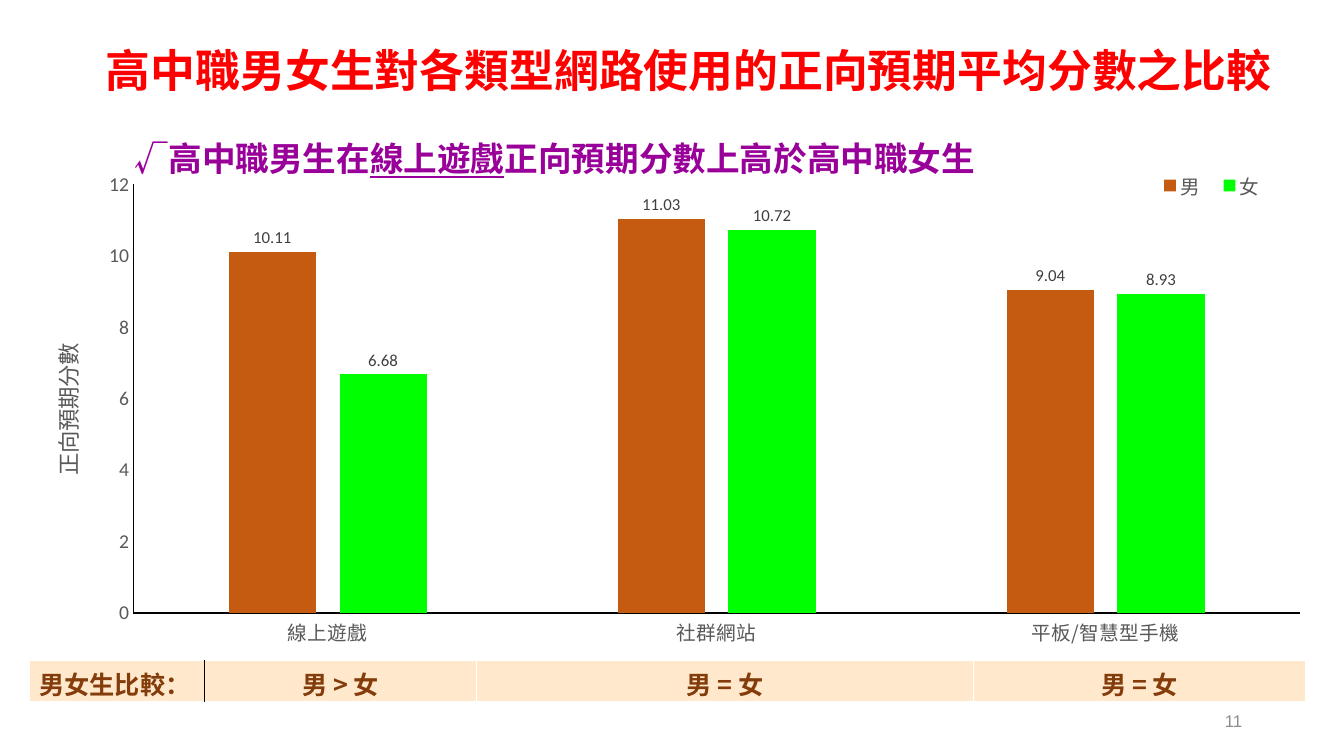
import dataclasses

import lxml.etree
import pptx
import pptx.chart.data
import pptx.dml.color
import pptx.enum.chart
import pptx.enum.text
import pptx.oxml.ns
import pptx.util

qn = pptx.oxml.ns.qn
ALIGN = pptx.enum.text.PP_ALIGN
ANCHOR = pptx.enum.text.MSO_ANCHOR
AUTO_SIZE = pptx.enum.text.MSO_AUTO_SIZE


@dataclasses.dataclass(frozen=True)
class Theme:
    """Colours, fonts and type sizes of the slide."""
    cjk: str = "Noto Sans CJK SC"
    latin: str = "Calibri"
    number_font: str = "Arial"
    white: str = "FFFFFF"
    black: str = "000000"
    title: str = "FF0000"
    finding: str = "990099"
    male: str = "C55A11"
    female: str = "00FF00"
    axis: str = "595959"
    label: str = "404040"
    band: str = "FFE8CC"
    band_text: str = "843C0B"
    number: str = "8C8C8C"
    title_size: int = 32
    finding_size: int = 24
    band_size: int = 18
    axis_title_size: int = 16
    axis_size: int = 14
    small_size: int = 12


THEME = Theme()


def rgb(code):
    """Return the colour for a hexadecimal code."""
    return pptx.dml.color.RGBColor.from_string(code)


def style(font, size, color, name=THEME.cjk, bold=False):
    """Set size, colour, typeface and weight of a font."""
    font.size = pptx.util.Pt(size)
    font.color.rgb = rgb(color)
    font.name = name
    font.bold = bold


def use_east_asian_font(root):
    """Give every styled font below root the same East Asian typeface."""
    for latin in list(root.iter(qn("a:latin"))):
        east_asian = lxml.etree.Element(qn("a:ea"), typeface=THEME.cjk)
        latin.addnext(east_asian)


def share_box(deck, left, top, width, height):
    """Turn percentages of the slide into left, top, width and height."""
    across, down = deck.slide_width / 100, deck.slide_height / 100
    return [int(length) for length in
            (left * across, top * down, width * across, height * down)]


def add_title(page, box):
    """Fill and place the title placeholder."""
    title = page.shapes.title
    title.left, title.top, title.width, title.height = box
    frame = title.text_frame
    frame.text = "高中職男女生對各類型網路使用的正向預期平均分數之比較"
    frame.auto_size = AUTO_SIZE.NONE
    frame.vertical_anchor = ANCHOR.MIDDLE
    para = frame.paragraphs[0]
    para.alignment = ALIGN.CENTER
    para.line_spacing = 0.9
    style(para.runs[0].font, THEME.title_size, THEME.title, bold=True)


def add_finding(page, box):
    """Add the finding, with its subject underlined."""
    frame = page.shapes.add_textbox(*box).text_frame
    frame.word_wrap = False
    frame.auto_size = AUTO_SIZE.SHAPE_TO_FIT_TEXT
    for text, underlined in (("√高中職男生在", False), ("線上遊戲", True),
                             ("正向預期分數上高於高中職女生", False)):
        span = frame.paragraphs[0].add_run()
        span.text = text
        style(span.font, THEME.finding_size, THEME.finding, bold=True)
        span.font.underline = underlined


def set_layout(parent, index, target=None, **shares):
    """Fix a chart part at shares of the chart area."""
    for old in parent.findall(qn("c:layout")):
        parent.remove(old)
    layout = lxml.etree.Element(qn("c:layout"))
    manual = lxml.etree.SubElement(layout, qn("c:manualLayout"))
    if target:
        lxml.etree.SubElement(manual, qn("c:layoutTarget"), val=target)
    for side in ("x", "y"):
        lxml.etree.SubElement(manual, qn(f"c:{side}Mode"), val="edge")
    for side, share in shares.items():
        lxml.etree.SubElement(manual, qn(f"c:{side}"), val=str(share))
    parent.insert(index, layout)


def format_axis(axis, font_name):
    """Give an axis a thin black line and grey labels without ticks."""
    axis.has_major_gridlines = False
    axis.major_tick_mark = pptx.enum.chart.XL_TICK_MARK.NONE
    axis.minor_tick_mark = pptx.enum.chart.XL_TICK_MARK.NONE
    axis.format.line.color.rgb = rgb(THEME.black)
    axis.format.line.width = pptx.util.Pt(0.75)
    style(axis.tick_labels.font, THEME.axis_size, THEME.axis, font_name)


def add_axis_title(axis):
    """Add the upright title of the value axis."""
    axis.has_title = True
    title = axis.axis_title
    title.text_frame.text = "正向預期分數"
    span = title.text_frame.paragraphs[0].runs[0]
    style(span.font, THEME.axis_title_size, THEME.axis)
    body = next(title._element.iter(qn("a:bodyPr")))
    body.set("rot", "-5400000")
    body.set("vert", "horz")
    set_layout(title._element, 1, x=0.02, y=0.33)


def add_score_chart(page, box):
    """Add the clustered columns of the scores by gender."""
    scores = pptx.chart.data.CategoryChartData(number_format="General")
    scores.categories = ["線上遊戲", "社群網站", "平板/智慧型手機"]
    scores.add_series("男", (10.11, 11.03, 9.04))
    scores.add_series("女", (6.68, 10.72, 8.93))
    kind = pptx.enum.chart.XL_CHART_TYPE.COLUMN_CLUSTERED
    chart = page.shapes.add_chart(kind, *box, scores).chart
    style(chart.font, 10, THEME.black, THEME.latin)
    chart.has_title = False
    plot = chart.plots[0]
    plot.gap_width, plot.overlap = 219, -27
    plot.vary_by_categories = False
    for series, color in zip(plot.series, (THEME.male, THEME.female)):
        series.format.fill.solid()
        series.format.fill.fore_color.rgb = rgb(color)
        labels = series.data_labels
        labels.show_value = True
        labels.position = pptx.enum.chart.XL_LABEL_POSITION.OUTSIDE_END
        style(labels.font, THEME.small_size, THEME.label, THEME.latin)
    format_axis(chart.category_axis, THEME.cjk)
    format_axis(chart.value_axis, THEME.latin)
    chart.value_axis.minimum_scale = 0
    chart.value_axis.maximum_scale = 12
    chart.value_axis.major_unit = 2
    add_axis_title(chart.value_axis)
    chart.has_legend = True
    legend = chart.legend
    legend.position = pptx.enum.chart.XL_LEGEND_POSITION.BOTTOM
    legend.include_in_layout = False
    style(legend.font, THEME.axis_size, THEME.axis)
    set_layout(legend._element, 1, x=0.87, y=0.01, w=0.1, h=0.07)
    plot_area = next(chart._chartSpace.iter(qn("c:plotArea")))
    set_layout(plot_area, 0, "inner", x=0.088, y=0.043, w=0.9, h=0.795)
    use_east_asian_font(chart._chartSpace)


def set_borders(cell, **colors):
    """Draw one-point borders on the sides L, R, T and B of a cell."""
    properties = cell._tc.get_or_add_tcPr()
    for side, color in colors.items():
        line = lxml.etree.SubElement(properties, qn(f"a:ln{side}"), w="12700")
        fill = lxml.etree.SubElement(line, qn("a:solidFill"))
        lxml.etree.SubElement(fill, qn("a:srgbClr"), val=color)


def add_comparison(page, box):
    """Add the one-row table that compares the genders."""
    texts = ("男女生比較：", "男 > 女", "男 = 女", "男 = 女")
    weights = (1.74, 2.69, 4.93, 3.29)
    table = page.shapes.add_table(1, len(texts), *box).table
    table.first_row = table.horz_banding = False
    for index, (text, weight) in enumerate(zip(texts, weights)):
        table.columns[index].width = int(box[2] * weight / sum(weights))
        cell = table.cell(0, index)
        set_borders(cell, L=THEME.black if index == 1 else THEME.white,
                    R=THEME.black if index == 0 else THEME.white,
                    T=THEME.white, B=THEME.white)
        cell.fill.solid()
        cell.fill.fore_color.rgb = rgb(THEME.band)
        cell.margin_bottom = 0
        para = cell.text_frame.paragraphs[0]
        para.text = text
        para.alignment = ALIGN.CENTER if index else ALIGN.LEFT
        style(para.runs[0].font, THEME.band_size, THEME.band_text, bold=True)


def add_page_number(page, box):
    """Add the page number at the lower right."""
    frame = page.shapes.add_textbox(*box).text_frame
    frame.word_wrap = True
    frame.vertical_anchor = ANCHOR.MIDDLE
    frame.text = "11"
    para = frame.paragraphs[0]
    para.alignment = ALIGN.RIGHT
    style(para.runs[0].font, THEME.small_size, THEME.number, THEME.number_font)


def main():
    """Build the slide and save it."""
    deck = pptx.Presentation()
    deck.slide_width = pptx.util.Inches(13.33)
    deck.slide_height = pptx.util.Inches(7.5)
    page = deck.slides.add_slide(deck.slide_layouts[5])
    page.background.fill.solid()
    page.background.fill.fore_color.rgb = rgb(THEME.white)
    add_title(page, share_box(deck, 6.98, 0, 88.6, 19.33))
    add_score_chart(page, share_box(deck, 1.43, 21.33, 96.47, 71.33))
    add_finding(page, share_box(deck, 9.3, 17.6, 66.39, 6.67))
    add_comparison(page, share_box(deck, 2.18, 87.33, 94.97, 5.47))
    add_page_number(page, share_box(deck, 70.67, 92.67, 22.5, 5.33))
    use_east_asian_font(page._element)
    deck.save("out.pptx")


if __name__ == "__main__":
    main()
